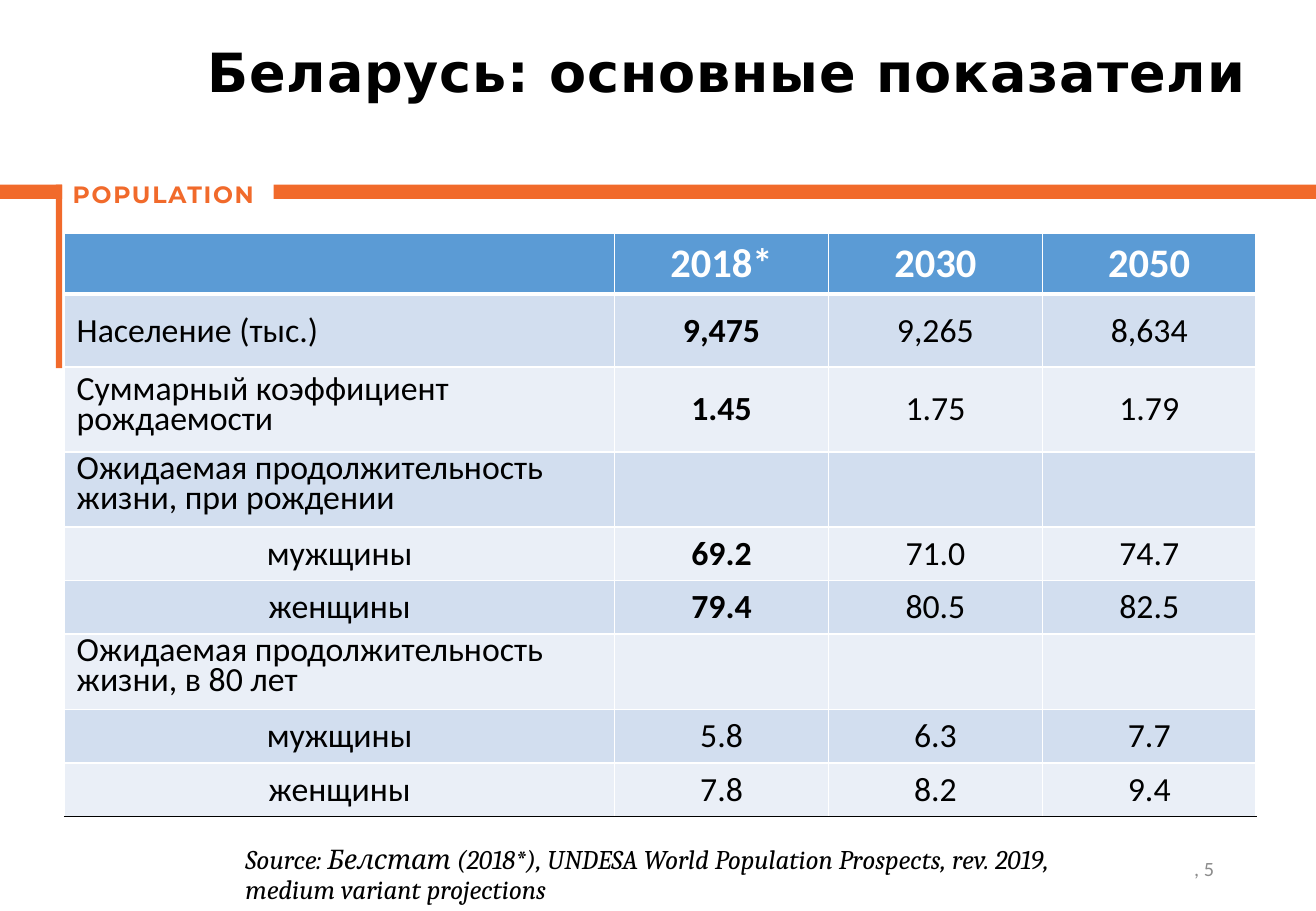
from lxml import etree
from pptx import Presentation
from pptx.dml.color import RGBColor
from pptx.enum.shapes import MSO_SHAPE
from pptx.enum.text import MSO_ANCHOR, PP_ALIGN
from pptx.oxml.ns import qn
from pptx.util import Cm, Pt

RECTANGLE = MSO_SHAPE.RECTANGLE
TOP, MIDDLE = MSO_ANCHOR.TOP, MSO_ANCHOR.MIDDLE
LEFT, CENTER, RIGHT = PP_ALIGN.LEFT, PP_ALIGN.CENTER, PP_ALIGN.RIGHT

ORANGE, BLACK, WHITE, GREY = "F16A2B", "000000", "FFFFFF", "8C8C8C"
HEADER_BLUE, BANDS = "5B9BD5", ("D2DEEF", "EAEFF7")

BARS = [
    (5.72, 3.86, 21.8, 0.3),
    (0, 3.86, 1.3, 0.3),
    (1.17, 3.86, 0.13, 3.84),
]
COLUMN_WIDTHS = [11.5, 4.47, 4.47, 4.47]
ROW_HEIGHTS = [1.27, 1.52, 1.78, 1.57, 1.12, 1.12, 1.57, 1.12, 1.12]
MEN, WOMEN = "мужщины", "женщины"
ROWS = [
    ("", "2018*", "2030", "2050"),
    ("Население (тыс.)", "9,475", "9,265", "8,634"),
    ("Суммарный коэффициент рождаемости", "1.45", "1.75", "1.79"),
    ("Ожидаемая продолжительность жизни, при рождении", "", "", ""),
    (MEN, "69.2", "71.0", "74.7"),
    (WOMEN, "79.4", "80.5", "82.5"),
    ("Ожидаемая продолжительность жизни, в 80 лет", "", "", ""),
    (MEN, "5.8", "6.3", "7.7"),
    (WOMEN, "7.8", "8.2", "9.4"),
]
MIDDLE_ROWS = (1, 2)
TIGHT_ROWS = (2, 3, 6)
LAST_MEASURED_ROW = 5


def color(value):
    """Turn a hex string into a colour."""
    return RGBColor.from_string(value)


def style_font(font, name, size, value, bold=False, italic=False):
    """Set the face, size, colour and weight of a font."""
    font.name = name
    font.size = Pt(size)
    font.bold = bold
    font.italic = italic
    font.color.rgb = color(value)


def add_bar(page, left, top, width, height):
    """Draw a plain orange bar."""
    bar = page.shapes.add_shape(RECTANGLE, Cm(left), Cm(top), Cm(width), Cm(height))
    bar.fill.solid()
    bar.fill.fore_color.rgb = color(ORANGE)
    bar.line.fill.background()
    bar.shadow.inherit = False


def add_text(page, place, text, font, align=LEFT, anchor=TOP, tracking=0):
    """Place a one-paragraph text box and return it."""
    box = page.shapes.add_textbox(*(Cm(length) for length in place))
    frame = box.text_frame
    frame.word_wrap = True
    frame.vertical_anchor = anchor
    para = frame.paragraphs[0]
    para.text = text
    para.alignment = align
    style_font(para.font, **font)
    if tracking:
        for span in para.runs:
            span.font._element.set("spc", str(int(tracking * 100)))
    return box


def set_borders(cell, **sides):
    """Give a cell its borders, each a colour and a width in points."""
    properties = cell._tc.get_or_add_tcPr()
    for side, (value, width) in sides.items():
        line = etree.SubElement(properties, qn(f"a:ln{side}"), w=str(Pt(width)))
        fill = etree.SubElement(line, qn("a:solidFill"))
        etree.SubElement(fill, qn("a:srgbClr"), val=value)


def fill_cell(cell, row, column, text):
    """Write and style one cell of the indicator table."""
    header, last = row == 0, row == len(ROWS) - 1
    thin, thick = (WHITE, 1), (WHITE, 3)
    set_borders(
        cell,
        L=thin,
        R=thin,
        T=thick if row == 1 else thin,
        B=thick if header else (BLACK, 1) if last else thin,
    )
    cell.fill.solid()
    cell.fill.fore_color.rgb = color(HEADER_BLUE if header else BANDS[(row - 1) % 2])
    cell.vertical_anchor = MIDDLE if row in MIDDLE_ROWS else TOP
    para = cell.text_frame.paragraphs[0]
    para.text = text
    is_label = column == 0 and text not in (MEN, WOMEN)
    para.alignment = LEFT if is_label else CENTER
    if column == 0 and row in TIGHT_ROWS:
        para.line_spacing = Pt(18)
    measured = column == 1 and row <= LAST_MEASURED_ROW
    style_font(
        para.font,
        "Calibri",
        24 if header else 20,
        WHITE if header else BLACK,
        bold=header or measured,
    )


def add_indicators(page):
    """Build the table of population indicators."""
    table = page.shapes.add_table(
        len(ROWS), len(COLUMN_WIDTHS), Cm(1.35), Cm(4.88),
        Cm(sum(COLUMN_WIDTHS)), Cm(sum(ROW_HEIGHTS)),
    ).table
    for column, width in zip(table.columns, COLUMN_WIDTHS):
        column.width = Cm(width)
    for row, height in zip(table.rows, ROW_HEIGHTS):
        row.height = Cm(height)
    for row, texts in enumerate(ROWS):
        for column, text in enumerate(texts):
            fill_cell(table.cell(row, column), row, column, text)


def main():
    """Build the slide and save it."""
    deck = Presentation()
    deck.slide_width, deck.slide_height = Cm(27.51), Cm(19.05)
    page = deck.slides.add_slide(deck.slide_layouts[6])

    for bar in BARS:
        add_bar(page, *bar)
    add_text(page, (1.27, 3.63, 4.98, 1.04), "POPULATION",
             dict(name="Montserrat", size=14, value=ORANGE, bold=True), tracking=1)
    add_text(page, (19.43, 17.65, 6.2, 1.02), ", 5",
             dict(name="Calibri", size=12, value=GREY), RIGHT, MIDDLE)
    title = add_text(page, (1.27, 0.58, 25.04, 2.77), "Беларусь: основные показатели",
                     dict(name="DejaVu Sans", size=32, value=BLACK, bold=True),
                     RIGHT, MIDDLE, tracking=0.5)
    title.text_frame.margin_bottom = Cm(1.07)
    add_indicators(page)
    source = add_text(
        page, (4.88, 17.58, 20.19, 2.11),
        "Source: Белстат (2018*), UNDESA World Population Prospects, rev. 2019,\v"
        "medium variant projections",
        dict(name="Cambria", size=16, value=BLACK, italic=True))
    source.text_frame.paragraphs[0].line_spacing = 0.9

    deck.save("out.pptx")


if __name__ == "__main__":
    main()
